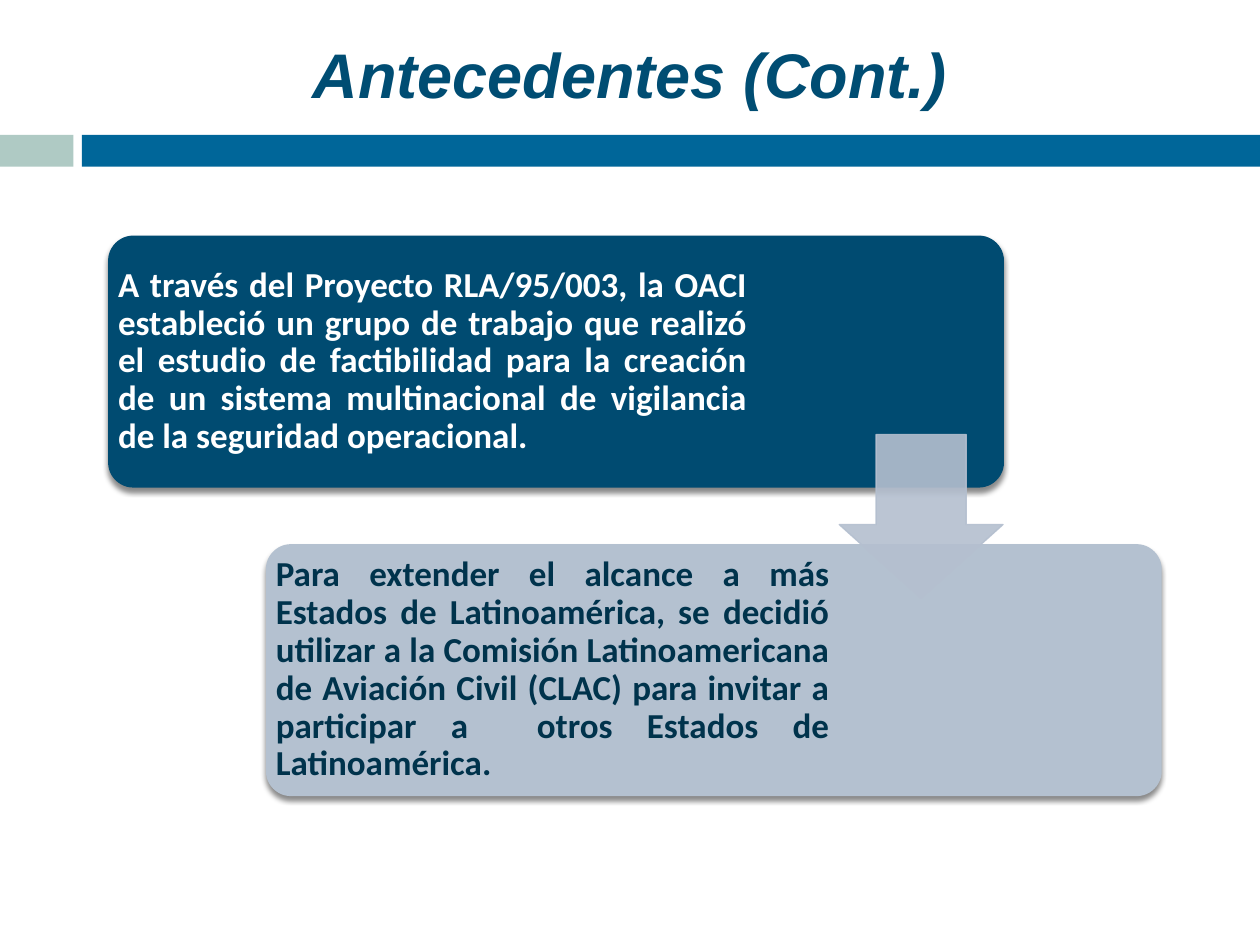
from dataclasses import dataclass

from lxml.etree import SubElement
from pptx import Presentation
from pptx.dml.color import RGBColor
from pptx.enum.shapes import MSO_SHAPE as Preset
from pptx.enum.text import MSO_ANCHOR as Anchor, MSO_AUTO_SIZE as AutoSize, PP_ALIGN as Align
from pptx.oxml.ns import qn
from pptx.util import Cm, Pt


@dataclass(frozen=True)
class Theme:
    accent: str = "AFCAC4"
    band: str = "006699"
    title: str = "004D73"
    dark_card: str = "004B71"
    light_card: str = "B4C1D0"
    light_text: str = "FFFFFF"
    dark_text: str = "00334C"
    arrow: str = "B4BFCF"
    shadow: str = "000000"
    title_font: str = "Arial"
    body_font: str = "Calibri"
    title_size: float = 36
    body_size: float = 20
    arrow_line: float = 0.79


def apply(target, values):
    for name, value in values.items():
        setattr(target, name, value)


class SlideBuilder:
    def __init__(self, presentation, theme):
        self.theme = theme
        self.slide = presentation.slides.add_slide(presentation.slide_layouts[5])

    def fill_text(self, shape, text, color, frame_format, paragraph_format, font_format):
        frame = shape.text_frame
        frame.text = text
        paragraph = frame.paragraphs[0]
        apply(frame, {"word_wrap": True, "auto_size": AutoSize.NONE, **frame_format})
        apply(paragraph, paragraph_format)
        font = paragraph.runs[0].font
        apply(font, {"bold": True, **font_format})
        font.color.rgb = RGBColor.from_string(color)

    def title(self, text, left, top, width, height):
        shape = self.slide.shapes.title
        apply(shape, {"left": Cm(left), "top": Cm(top), "width": Cm(width), "height": Cm(height)})
        self.fill_text(
            shape, text, self.theme.title,
            {"vertical_anchor": Anchor.TOP},
            {"alignment": Align.CENTER},
            {"name": self.theme.title_font, "size": Pt(self.theme.title_size), "italic": True},
        )

    def block(self, preset, left, top, width, height, color, adjustments=()):
        shape = self.slide.shapes.add_shape(preset, Cm(left), Cm(top), Cm(width), Cm(height))
        shape.shadow.inherit = False
        shape.fill.solid()
        shape.fill.fore_color.rgb = RGBColor.from_string(color)
        shape.line.fill.background()
        for index, value in enumerate(adjustments):
            shape.adjustments[index] = value
        return shape

    def card(self, text, left, top, width, height, text_width, fill, text_color):
        shape = self.block(Preset.ROUNDED_RECTANGLE, left, top, width, height, fill, [0.1])
        effects = shape._element.spPr.find(qn("a:effectLst"))
        shadow = SubElement(
            effects, qn("a:outerShdw"),
            blurRad=str(Pt(3)), dist=str(Pt(2.4)), dir="5400000", rotWithShape="0",
        )
        color = SubElement(shadow, qn("a:srgbClr"), val=self.theme.shadow)
        SubElement(color, qn("a:alpha"), val="45000")
        box = self.slide.shapes.add_textbox(Cm(left), Cm(top), Cm(text_width), Cm(height))
        margins = {f"margin_{side}": Cm(0.2) for side in ("left", "top", "right", "bottom")}
        self.fill_text(
            box, text, text_color,
            {"vertical_anchor": Anchor.MIDDLE, **margins},
            {"alignment": Align.JUSTIFY, "line_spacing": 0.9},
            {"name": self.theme.body_font, "size": Pt(self.theme.body_size)},
        )

    def arrow(self, left, top, size):
        shape = self.block(Preset.DOWN_ARROW, left, top, size, size, self.theme.arrow, [0.55, 0.45])
        shape.line.color.rgb = RGBColor.from_string(self.theme.arrow)
        shape.line.width = Pt(self.theme.arrow_line)
        for color in shape._element.spPr.iter(qn("a:srgbClr")):
            SubElement(color, qn("a:alpha"), val="90000")


def main():
    theme = Theme()
    presentation = Presentation()
    apply(presentation, {"slide_width": Cm(25.4), "slide_height": Cm(19.05)})
    builder = SlideBuilder(presentation, theme)

    for left, width, color in ((0, 1.48, theme.accent), (1.65, 23.75, theme.band)):
        builder.block(Preset.RECTANGLE, left, 2.72, width, 0.64, color)
    builder.title("Antecedentes (Cont.)", 1.19, 0.58, 23.01, 1.8)

    cards = (
        ("A través del Proyecto RLA/95/003, la OACI estableció un grupo de trabajo que realizó "
         "el estudio de factibilidad para la creación de un sistema multinacional de vigilancia "
         "de la seguridad operacional.",
         13.08, theme.dark_card, theme.light_text),
        ("Para extender el alcance a más Estados de Latinoamérica, se decidió utilizar a la "
         "Comisión Latinoamericana de Aviación Civil (CLAC) para invitar a participar a  otros "
         "Estados de Latinoamérica.",
         11.56, theme.light_card, theme.dark_text),
    )
    for step, (text, text_width, fill, text_color) in enumerate(cards):
        builder.card(
            text, 2.18 + step * 3.18, 4.75 + step * 6.22, 18.06, 5.08,
            text_width, fill, text_color,
        )
    builder.arrow(16.92, 8.76, 3.3)

    presentation.save("out.pptx")


if __name__ == "__main__":
    main()
